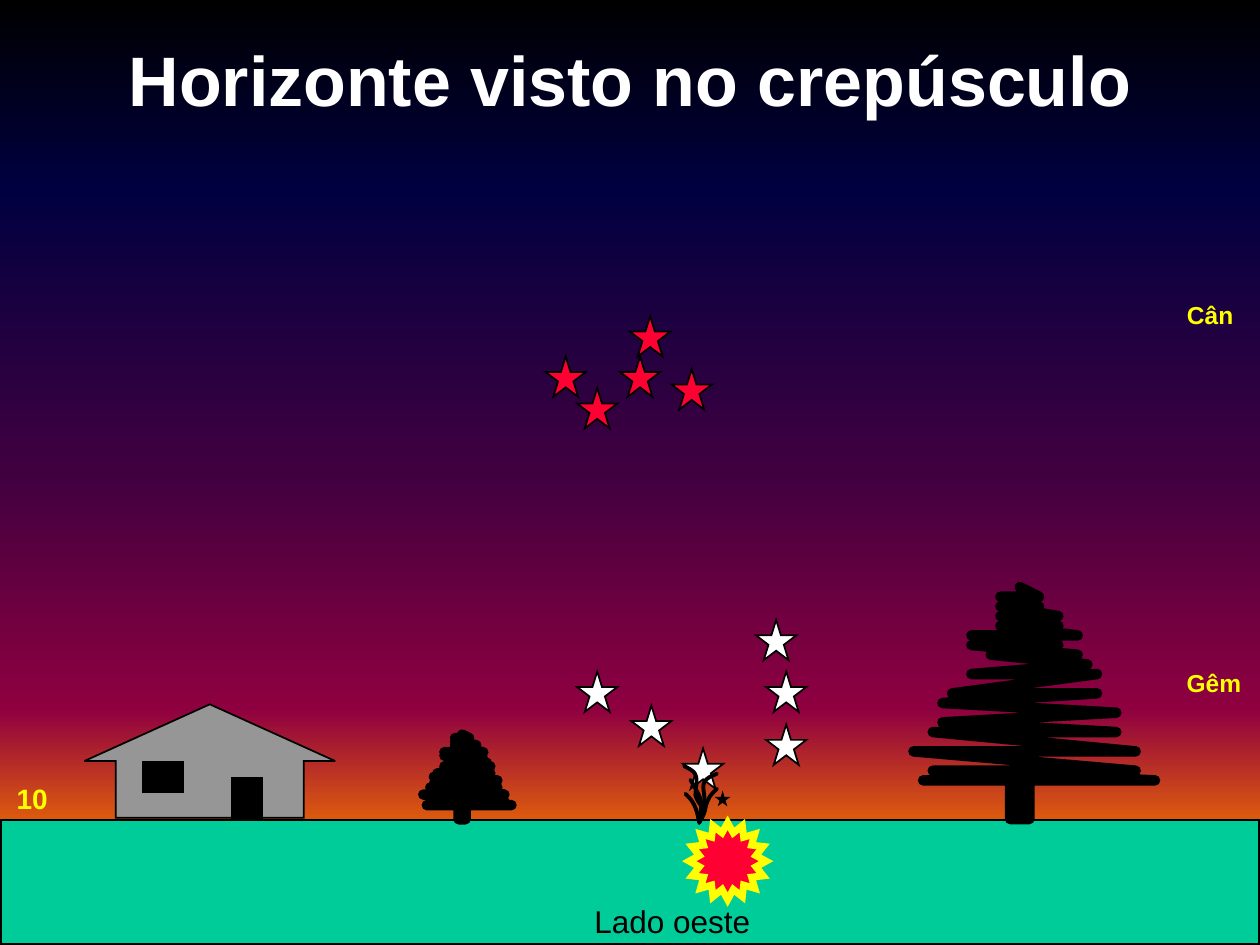
from lxml import etree
from pptx import Presentation
from pptx import util as u
from pptx.dml.color import RGBColor
from pptx.enum import shapes, text
from pptx.oxml.ns import qn

THEME = {
    "font": "Arial", "white": "FFFFFF", "black": "000000", "yellow": "FFFF00",
    "red": "FF0033", "grass": "00CC99", "wall": "969696",
    "title": 40, "caption": 18, "number": 16, "label": 14,
    "thin": 1, "blade": 2.25, "ray": 4, "branch": 6,
}
SKY = [(0, "000000"), (20, "000040"), (50, "400040"),
       (75, "8F0040"), (90, "F27300"), (100, "FFBF00")]

TITLE = "Horizonte visto no crepúsculo"
LABELS = [
    ("10", (0.03, 6.15, 0.45, 0.37), "number", "yellow", True),
    ("Cân", (9.32, 2.33, 0.57, 0.33), "label", "yellow", True),
    ("Gêm", (9.32, 5.25, 0.63, 0.33), "label", "yellow", True),
    ("Lado oeste", (4.61, 7.11, 1.45, 0.4), "caption", "black", False),
]

STAR_SIZE = 0.32
STARS = {
    "white": [(6, 4.92), (5.42, 5.94), (6.08, 5.75), (4.58, 5.33),
              (6.08, 5.33), (5.01, 5.6)],
    "red": [(4.58, 3.08), (4.92, 2.83), (4.33, 2.83), (5.33, 2.93), (5, 2.51)],
}

BRANCHES = [
    (11, 0), (13, 1), (9, 1), (13, 2), (9, 2), (15, 3), (9, 3), (15, 4), (9, 4),
    (17, 5), (6, 5), (15, 6), (6, 6), (17, 7), (8, 7), (18, 8), (6, 9), (19, 9),
    (4, 11), (19, 11), (3, 12), (21, 13), (3, 14), (21, 15), (2, 15), (23, 17),
    (0, 17), (23, 19), (2, 19), (25, 20), (1, 20), (10, 20), (10, 24), (12, 24),
    (12, 20),
]
TRUNK = (10, 20, 2, 4)
PINE = (7.25, 4.66, 0.0767)
BUSH = (3.36, 5.83, 0.028)

BLADES = [
    [(5.44, 6.3), (5.47, 6.33), (5.49, 6.35), (5.51, 6.39),
     (5.53, 6.43), (5.54, 6.48), (5.55, 6.53)],
    [(5.48, 6.19), (5.51, 6.24), (5.54, 6.29), (5.56, 6.34),
     (5.57, 6.4), (5.56, 6.47), (5.55, 6.53)],
    [(5.69, 6.26), (5.66, 6.29), (5.63, 6.32), (5.62, 6.35), (5.6, 6.39),
     (5.6, 6.42), (5.59, 6.45), (5.58, 6.48), (5.56, 6.51), (5.55, 6.53)],
    [(5.69, 6.14), (5.65, 6.16), (5.61, 6.17), (5.59, 6.21), (5.57, 6.25),
     (5.6, 6.32), (5.59, 6.36), (5.58, 6.4), (5.57, 6.43), (5.56, 6.45)],
    [(5.43, 6.08), (5.47, 6.1), (5.51, 6.12), (5.52, 6.15), (5.54, 6.19),
     (5.52, 6.27), (5.52, 6.31), (5.53, 6.35), (5.55, 6.37), (5.56, 6.39)],
]


def color(name):
    return RGBColor.from_string(THEME[name])


def inches(values):
    return [u.Inches(value) for value in values]


def write(frame, words, size, ink, bold=False, wrap=False):
    frame.word_wrap = wrap
    frame.auto_size = text.MSO_AUTO_SIZE.NONE
    paragraph = frame.paragraphs[0]
    paragraph.alignment = text.PP_ALIGN.CENTER
    run = paragraph.add_run()
    run.text = words
    run.font.name = THEME["font"]
    run.font.size = u.Pt(THEME[size])
    run.font.bold = bold
    run.font.color.rgb = color(ink)


def outline(shape, width, ink="black", join="miter"):
    shape.shadow.inherit = False
    shape.line.color.rgb = color(ink)
    shape.line.width = u.Pt(THEME[width])
    line = shape.line._ln
    corner = etree.SubElement(line, qn("a:" + join))
    if join == "miter":
        corner.set("lim", "800000")
    else:
        line.set("cap", "rnd")


def add_solid(parent, kind, box, fill, width="thin", ink="black", adjust=()):
    shape = parent.add_shape(kind, *inches(box))
    for index, value in enumerate(adjust):
        shape.adjustments[index] = value
    shape.fill.solid()
    shape.fill.fore_color.rgb = color(fill)
    outline(shape, width, ink)


def add_stroke(parent, points, width):
    builder = parent.build_freeform(*inches(points[0]), scale=1.0)
    builder.add_line_segments([inches(point) for point in points[1:]], close=False)
    shape = builder.convert_to_shape()
    shape.fill.background()
    outline(shape, width, join="round")


def add_tree(slide, left, top, unit):
    group = slide.shapes.add_group_shape().shapes
    add_stroke(group, [(left + x * unit, top + y * unit) for x, y in BRANCHES], "branch")
    x, y, width, height = TRUNK
    add_solid(group, shapes.MSO_SHAPE.RECTANGLE,
              (left + x * unit, top + y * unit, width * unit, height * unit), "black")


def curve(points, steps=8):
    result = [points[0]]
    for first in range(0, len(points) - 1, 3):
        a, b, c, d = points[first:first + 4]
        for step in range(1, steps + 1):
            t = step / steps
            s = 1 - t
            result.append(tuple(
                s**3 * a[i] + 3 * s * s * t * b[i] + 3 * s * t * t * c[i] + t**3 * d[i]
                for i in (0, 1)))
    return result


def paint_sky(slide):
    fill = slide.background.fill
    fill.gradient()
    fill.gradient_angle = 270
    stops = slide.background._cSld.find(".//" + qn("a:gsLst"))
    for stop in list(stops):
        stops.remove(stop)
    for position, value in SKY:
        stop = etree.SubElement(stops, qn("a:gs"), pos=str(position * 1000))
        etree.SubElement(stop, qn("a:srgbClr"), val=value)


def main():
    presentation = Presentation()
    presentation.slide_width, presentation.slide_height = inches((10, 7.5))
    slide = presentation.slides.add_slide(presentation.slide_layouts[5])
    paint_sky(slide)

    title = slide.shapes.title
    title.left, title.top, title.width, title.height = inches((0, 0, 10, 1.25))
    title.text_frame.vertical_anchor = text.MSO_ANCHOR.MIDDLE
    write(title.text_frame, TITLE, "title", "white", bold=True, wrap=True)

    kinds = shapes.MSO_SHAPE
    add_solid(slide.shapes, kinds.RECTANGLE, (0.01, 6.51, 9.98, 0.98), "grass")
    add_solid(slide.shapes, kinds.STAR_16_POINT, (5.47, 6.53, 0.61, 0.61), "red",
              width="ray", ink="yellow", adjust=[0.375])
    add_tree(slide, *PINE)

    add_solid(slide.shapes, kinds.UP_ARROW, (0.67, 5.59, 1.99, 0.9), "wall",
              adjust=[0.75, 0.5])
    for opening in [(1.84, 6.17, 0.24, 0.32), (1.13, 6.05, 0.32, 0.24)]:
        add_solid(slide.shapes, kinds.RECTANGLE, opening, "black")
    add_tree(slide, *BUSH)

    for fill, places in STARS.items():
        for place in places:
            add_solid(slide.shapes, kinds.STAR_5_POINT,
                      (*place, STAR_SIZE, STAR_SIZE), fill)

    plant = slide.shapes.add_group_shape().shapes
    add_solid(plant, kinds.STAR_5_POINT, (5.72, 6.33, 0.03, 0.03), "yellow", width="blade")
    for blade in BLADES:
        add_stroke(plant, curve(blade), "blade")

    for words, box, size, ink, bold in LABELS:
        label = slide.shapes.add_textbox(*inches(box))
        write(label.text_frame, words, size, ink, bold=bold)

    presentation.save("out.pptx")


if __name__ == "__main__":
    main()
